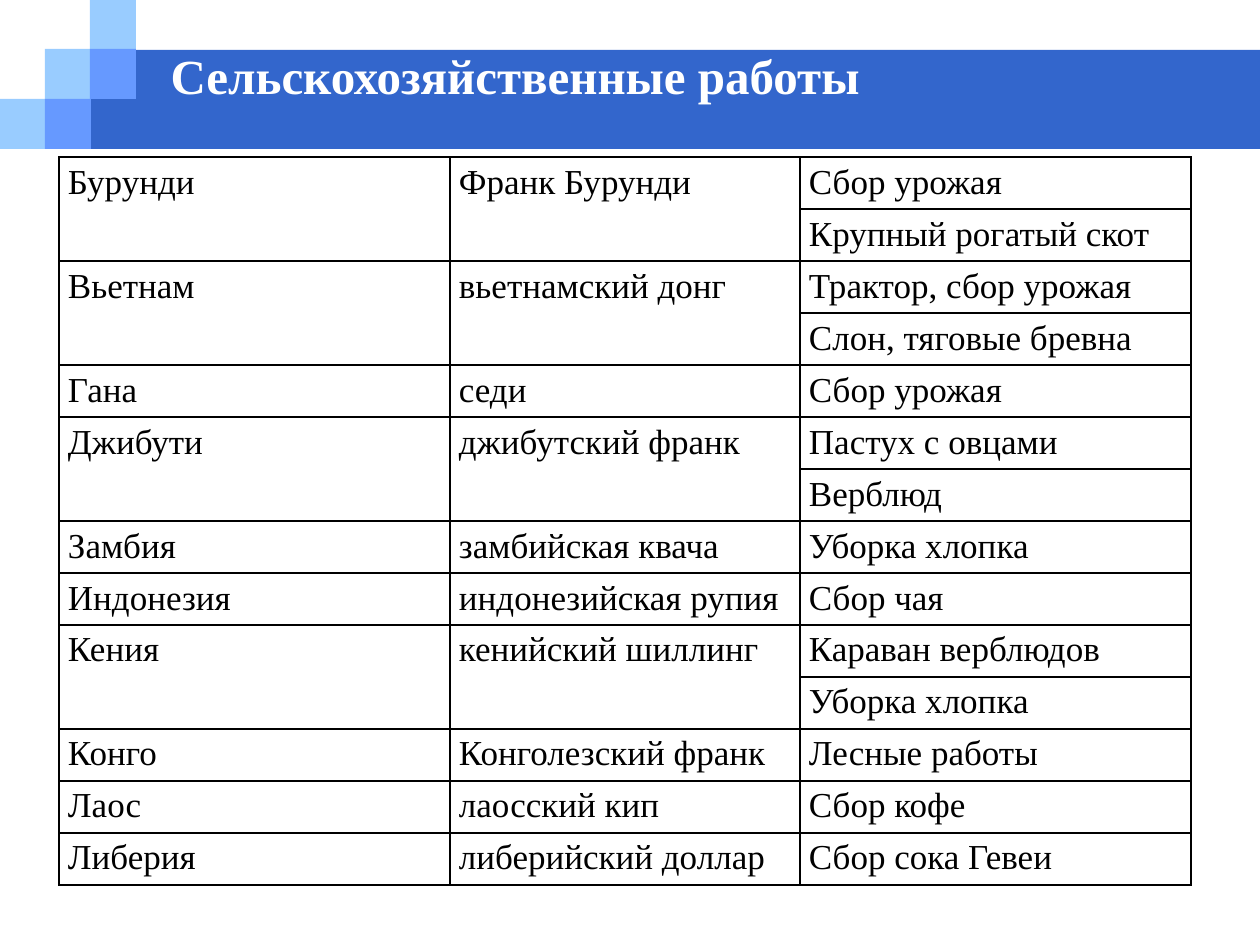
from dataclasses import dataclass

from lxml import etree
from pptx import Presentation
from pptx import util as u
from pptx.dml.color import RGBColor
from pptx.enum import shapes, text
from pptx.oxml.ns import qn

PX = 914400 / 126
TITLE_ONLY = 5


@dataclass(frozen=True)
class Theme:
    font: str = "Times New Roman"
    title_size: int = 28
    cell_size: int = 20
    band: str = "3366CC"
    light: str = "99CCFF"
    medium: str = "6699FF"
    paper: str = "FFFFFF"
    ink: str = "000000"


THEME = Theme()

# Country, currency, works
COUNTRIES = [
    ("Бурунди", "Франк Бурунди", ["Сбор урожая", "Крупный рогатый скот"]),
    ("Вьетнам", "вьетнамский донг", ["Трактор, сбор урожая", "Слон, тяговые бревна"]),
    ("Гана", "седи", ["Сбор урожая"]),
    ("Джибути", "джибутский франк", ["Пастух с овцами", "Верблюд"]),
    ("Замбия", "замбийская квача", ["Уборка хлопка"]),
    ("Индонезия", "индонезийская рупия", ["Сбор чая"]),
    ("Кения", "кенийский шиллинг", ["Караван верблюдов", "Уборка хлопка"]),
    ("Конго", "Конголезский франк", ["Лесные работы"]),
    ("Лаос", "лаосский кип", ["Сбор кофе"]),
    ("Либерия", "либерийский доллар", ["Сбор сока Гевеи"]),
]


def px(*lengths):
    return [u.Emu(round(length * PX)) for length in lengths]


def style_runs(paragraph, size, color, bold=False):
    for run in paragraph.runs:
        run.font.name = THEME.font
        run.font.size = u.Pt(size)
        run.font.bold = bold
        run.font.color.rgb = RGBColor.from_string(color)


def add_block(slide, box, color):
    block = slide.shapes.add_shape(shapes.MSO_SHAPE.RECTANGLE, *px(*box))
    block.shadow.inherit = False
    block.fill.solid()
    block.fill.fore_color.rgb = RGBColor.from_string(color)
    block.line.fill.background()


def add_header(slide, box):
    """Blue band with a staircase of squares on a 3 by 3 grid at its left end."""
    left, top, width, height = box
    stairs_width = 136
    add_block(slide, (left + 91, top + 50, width - 91, height - 50), THEME.band)
    squares = [(0, 2, THEME.light), (1, 1, THEME.light), (2, 0, THEME.light),
               (2, 1, THEME.medium), (1, 2, THEME.medium)]
    for column, row, color in squares:
        x = left + stairs_width * column // 3
        y = top + height * row // 3
        add_block(slide, (x, y, 46, 50), color)


def place_title(slide, box, words):
    title = slide.shapes.title
    slide.shapes._spTree.append(title._element)  # bring in front of the band
    title.left, title.top, title.width, title.height = px(*box)
    frame = title.text_frame
    frame.text = words
    frame.word_wrap = True
    frame.auto_size = text.MSO_AUTO_SIZE.NONE
    frame.vertical_anchor = text.MSO_ANCHOR.MIDDLE
    paragraph = frame.paragraphs[0]
    paragraph.alignment = text.PP_ALIGN.LEFT
    paragraph.line_spacing = 1.0
    style_runs(paragraph, THEME.title_size, THEME.paper, bold=True)
    for line_break in paragraph._p.findall(qn("a:br")):
        etree.SubElement(line_break, qn("a:rPr"), sz=str(THEME.title_size * 100))


def format_cell(cell):
    cell.margin_left, cell.margin_right, cell.margin_top, cell.margin_bottom = px(9, 9, 0, 0)
    cell.vertical_anchor = text.MSO_ANCHOR.TOP
    properties = cell._tc.get_or_add_tcPr()
    for side in ("lnL", "lnR", "lnT", "lnB"):
        border = etree.SubElement(properties, qn(f"a:{side}"), w=str(u.Pt(1)))
        fill = etree.SubElement(border, qn("a:solidFill"))
        etree.SubElement(fill, qn("a:srgbClr"), val=THEME.ink)
    cell.fill.background()
    paragraph = cell.text_frame.paragraphs[0]
    paragraph.line_spacing = 1.15
    style_runs(paragraph, THEME.cell_size, THEME.ink)


def add_country_table(slide, box, countries):
    """One row for each work; country and currency span all their works."""
    row_count = sum(len(works) for _, _, works in countries)
    width, height = box[2:]
    table = slide.shapes.add_table(row_count, 3, *px(*box)).table
    table.first_row = table.horz_banding = False
    outer = 391
    for column, size in zip(table.columns, px(outer, width - 2 * outer, outer)):
        column.width = size
    for row in table.rows:
        row.height = px(height // row_count)[0]

    first = 0
    for country, currency, works in countries:
        last = first + len(works) - 1
        for column, words in enumerate((country, currency)):
            table.cell(first, column).text = words
            if last > first:
                table.cell(first, column).merge(table.cell(last, column))
        for offset, work in enumerate(works):
            table.cell(first + offset, 2).text = work
        first = last + 1
    for cell in table.iter_cells():
        format_cell(cell)


def main():
    presentation = Presentation()
    presentation.slide_width, presentation.slide_height = px(1260, 945)
    slide = presentation.slides.add_slide(presentation.slide_layouts[TITLE_ONLY])
    add_header(slide, (0, 0, 1260, 149))
    place_title(slide, (158, 78, 1018, 52), "Сельскохозяйственные работы\v")
    add_country_table(slide, (59, 157, 1132, 728), COUNTRIES)
    presentation.save("out.pptx")


if __name__ == "__main__":
    main()
